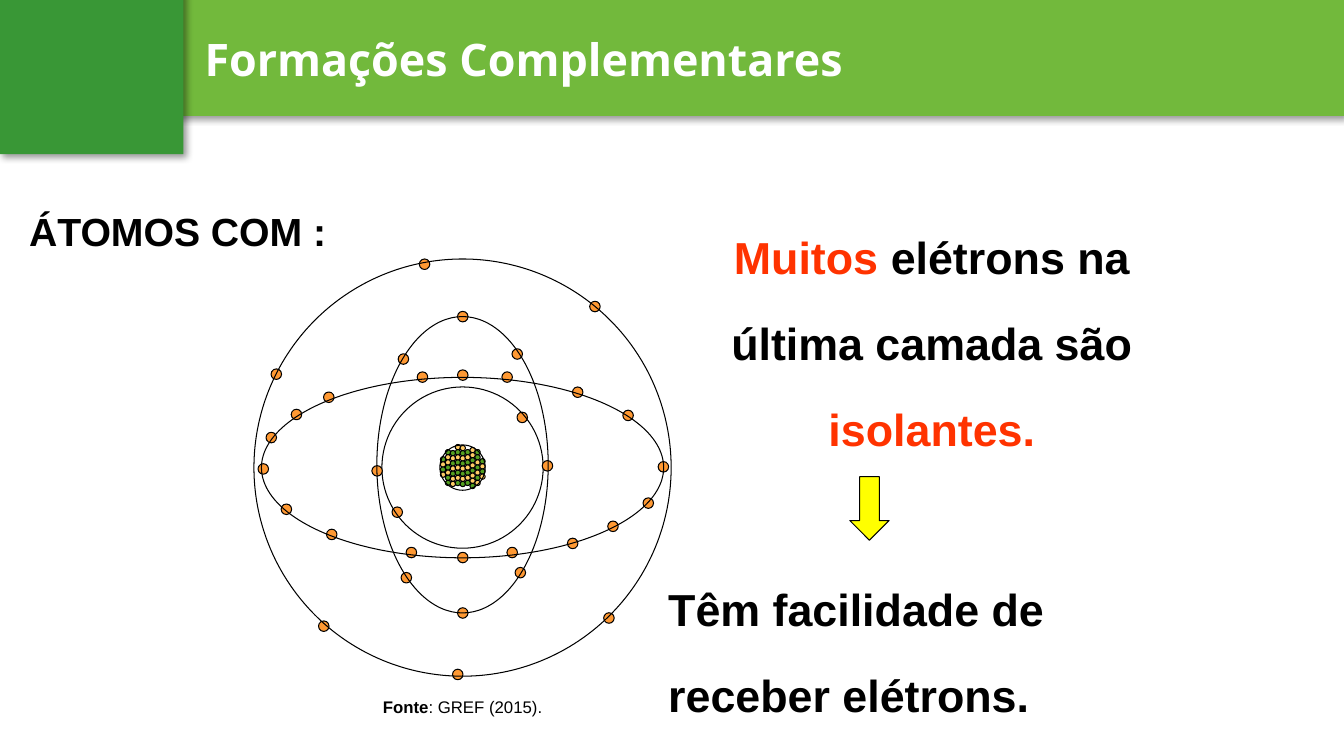
from lxml.etree import SubElement
from pptx import Presentation
from pptx.dml.color import RGBColor
from pptx.enum.shapes import MSO_SHAPE as Preset
from pptx.enum.text import MSO_ANCHOR as Anchor, MSO_AUTO_SIZE as AutoSize, PP_ALIGN as Align
from pptx.oxml.ns import qn
from pptx.util import Pt

BLACK = RGBColor(0x00, 0x00, 0x00)
WHITE = RGBColor(0xFF, 0xFF, 0xFF)
LIGHT_GREEN = RGBColor(0x72, 0xB9, 0x3C)
DARK_GREEN = RGBColor(0x39, 0x97, 0x36)
RED = RGBColor(0xFF, 0x33, 0x00)
YELLOW = RGBColor(0xFF, 0xFF, 0x00)
ORANGE = RGBColor(0xFF, 0x99, 0x33)
NUCLEON_COLORS = {"G": RGBColor(0x54, 0xA0, 0x21), "Y": RGBColor(0xFF, 0xCC, 0x66)}

ELECTRON_SIZE = 7.5
NUCLEON_SIZE = 3.8
COLUMN_STEP, ROW_STEP = 3.52, 3.66

# Nucleon columns, left to right: top of the column, then one letter per nucleon
NUCLEUS_COLUMNS = [
    (141.2, "GYGY"), (136.1, "GYYGYGG"), (136.8, "GYGYGYY"),
    (132.5, "YGYGYGYG"), (133.2, "YGYGYGYG"), (136.1, "GYGYGYG"),
    (134.6, "YYGYGYYG"), (136.1, "GGYGYGY"), (142.6, "GYGY"),
]

# Orbits: width, height, shift of the centre downwards, top left corners of the electrons
ORBITS = [
    (115.2, 115.2, 0, [(98.6, 177.1), (187.9, 109.4)]),
    (122.4, 211.7, -2, [
        (145.4, 37.4), (145.4, 249.1), (105.1, 223.9), (186.5, 220.3),
        (103, 67.7), (184.3, 64.1), (84.2, 147.6), (205.9, 144)]),
    (287.3, 128.9, 0, [
        (49.7, 95), (288.7, 144.7), (2.9, 146.2), (145.4, 79.2), (145.4, 209.5),
        (227.5, 91.4), (223.9, 199.4), (51.8, 193), (19.4, 175), (8.6, 123.8),
        (263.5, 108), (277.9, 170.6), (180.7, 205.9), (177.1, 80.6), (116.6, 80.6),
        (108.7, 205.9), (252.7, 187.2), (26.6, 107.3)]),
    (298, 298, 0, [
        (239.8, 30.2), (46.1, 258.5), (141.8, 293), (118.1, 0), (249.8, 252.7), (12.2, 78.5)]),
]


def add_shadow(properties):
    effects = properties.find(qn("a:effectLst"))
    if effects is None:
        effects = SubElement(properties, qn("a:effectLst"))
    shadow = SubElement(effects, qn("a:outerShdw"), blurRad=str(Pt(5)), dist=str(Pt(3)),
                        dir="2700000", algn="tl", rotWithShape="0")
    color = SubElement(shadow, qn("a:srgbClr"), val=str(BLACK))
    SubElement(color, qn("a:alpha"), val="40000")


def add_figure(page, preset, box, fill=None, outlined=True):
    figure = page.shapes.add_shape(preset, *map(Pt, box))
    figure.shadow.inherit = False
    if fill is None:
        figure.fill.background()
    else:
        figure.fill.solid()
        figure.fill.fore_color.rgb = fill
    if outlined:
        figure.line.color.rgb = BLACK
        figure.line.width = Pt(0.75)
    else:
        figure.line.fill.background()
    return figure


def add_text(page, box, spans, size, align=Align.LEFT, spacing=None, font="Arial", grow=True):
    """Each span is (text, colour, bold)."""
    label = page.shapes.add_textbox(*map(Pt, box))
    frame = label.text_frame
    frame.word_wrap = True
    frame.auto_size = AutoSize.SHAPE_TO_FIT_TEXT if grow else AutoSize.NONE
    para = frame.paragraphs[0]
    para.alignment = align
    para.font.name, para.font.size = font, Pt(size)
    if spacing:
        para.line_spacing = spacing
    for text, color, bold in spans:
        span = para.add_run()
        span.text = text
        span.font.name, span.font.size = font, Pt(size)
        span.font.bold = bold
        span.font.color.rgb = color
    return label


def add_header(page, box):
    left, top, width, height = box
    # Band, title and corner block
    band = add_figure(page, Preset.RECTANGLE, (left + 101.5, top, width - 101.5, height),
                      LIGHT_GREEN, outlined=False)
    title = add_text(page, (left + 139, top + 18.7, 779, 46),
                     [("Formações Complementares", WHITE, True)], 32,
                     font="Open Sans", grow=False)
    title.text_frame.vertical_anchor = Anchor.MIDDLE
    corner = add_figure(page, Preset.RECTANGLE, (left, top - 5.8, 131, 116),
                        DARK_GREEN, outlined=False)
    for block in (band, corner):
        add_shadow(block._element.spPr)
    # The text shadow sits between the fill and the font name
    span_properties = title.text_frame.paragraphs[0].runs[0]._r.get_or_add_rPr()
    add_shadow(span_properties)
    effects = span_properties.find(qn("a:effectLst"))
    span_properties.find(qn("a:solidFill")).addnext(effects)


def add_atom(page, box):
    left, top, width, height = box
    center_x, center_y = left + width / 2, top + height / 2

    # Nucleus
    for column, (column_top, letters) in enumerate(NUCLEUS_COLUMNS):
        for row, letter in enumerate(letters):
            add_figure(page, Preset.OVAL,
                       (left + 133.2 + column * COLUMN_STEP, top + column_top + row * ROW_STEP,
                        NUCLEON_SIZE, NUCLEON_SIZE), NUCLEON_COLORS[letter])
    add_figure(page, Preset.OVAL, (center_x - 16.2, center_y - 16.2, 32.4, 32.4))

    # Electrons, each crossed by its orbit
    for orbit_width, orbit_height, shift, electrons in ORBITS:
        for x, y in electrons:
            add_figure(page, Preset.OVAL,
                       (left + x, top + y, ELECTRON_SIZE, ELECTRON_SIZE), ORANGE)
        add_figure(page, Preset.OVAL,
                   (center_x - orbit_width / 2, center_y - orbit_height / 2 + shift,
                    orbit_width, orbit_height))

    # Source line
    add_text(page, (left + 35.3, top + 309, 227.5, 28.8),
             [("Fonte", BLACK, True), (": GREF (2015).", BLACK, False)], 12, Align.CENTER)


def add_explanation(page, box):
    left, top, width, height = box
    add_text(page, (left + 3.6, top, width - 3.6, 170),
             [("Muitos", RED, True), (" elétrons na última camada são ", BLACK, True),
              ("isolantes.", RED, True)], 32, Align.CENTER, 1.6)
    add_text(page, (left, top + 251.3, 365, 165.6),
             [("Têm facilidade de receber elétrons.", BLACK, True)], 32, spacing=1.6)
    add_figure(page, Preset.DOWN_ARROW, (left + 136.8, top + 203, 28.1, 45.4), YELLOW)


def main():
    deck = Presentation()
    deck.slide_width, deck.slide_height = Pt(960), Pt(540)
    page = deck.slides.add_slide(deck.slide_layouts[6])
    add_header(page, (0, 0, 960, 82.8))
    add_atom(page, (181.4, 185, 298, 298))
    add_text(page, (13.7, 124.6, 246, 61.2), [("ÁTOMOS COM :", BLACK, True)], 28, spacing=1.6)
    add_explanation(page, (470.2, 137.5, 387.4, 417))
    deck.save("out.pptx")


if __name__ == "__main__":
    main()
